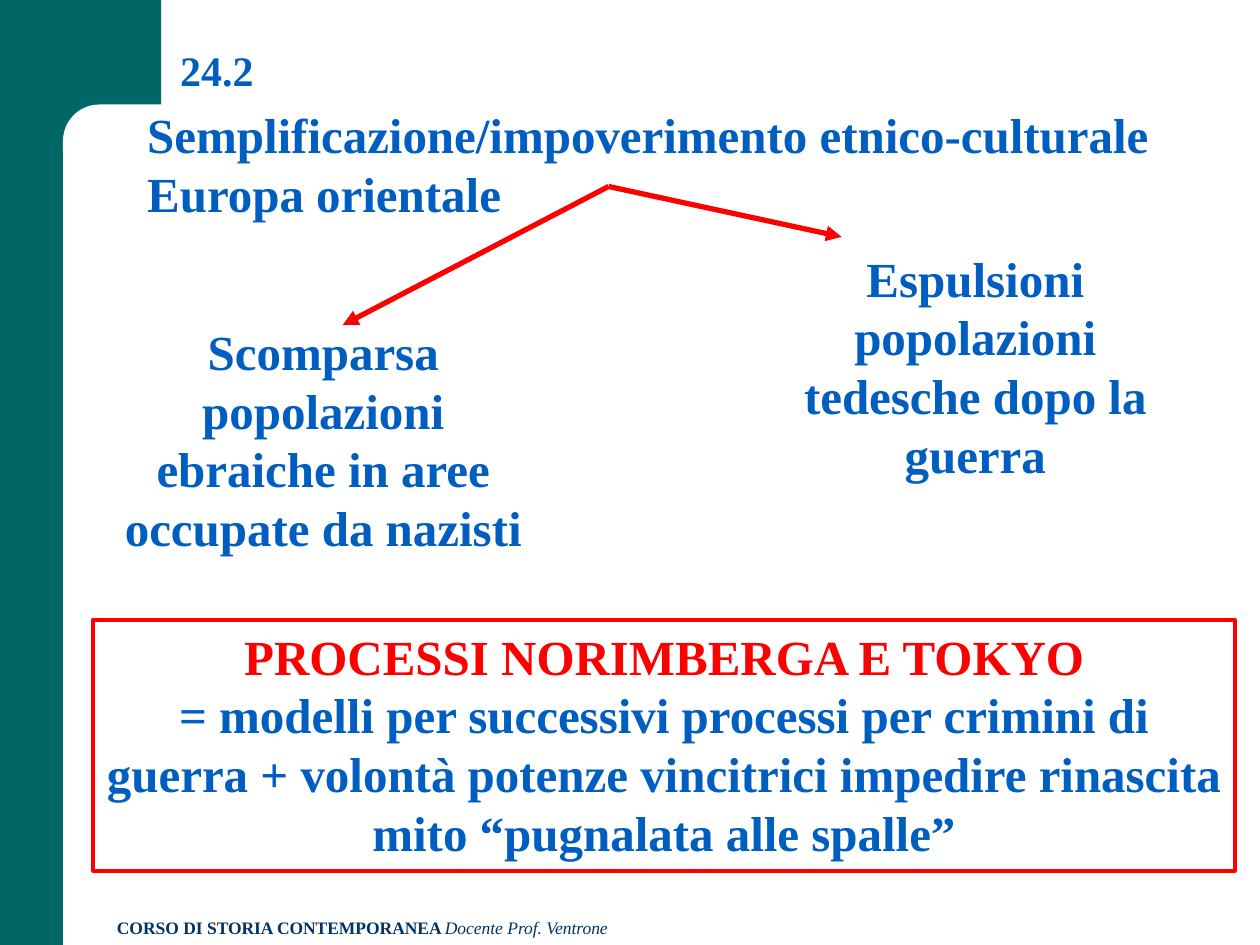
from pptx import Presentation
from pptx.dml.color import RGBColor
from pptx.enum.shapes import MSO_CONNECTOR, MSO_SHAPE
from pptx.enum.text import MSO_ANCHOR, PP_ALIGN
from pptx.oxml.ns import qn
from pptx.util import Inches, Pt
from lxml import etree

RECT, ROUND = MSO_SHAPE.RECTANGLE, MSO_SHAPE.ROUNDED_RECTANGLE
LEFT, MID = PP_ALIGN.LEFT, PP_ALIGN.CENTER
TOP, BOTTOM = MSO_ANCHOR.TOP, MSO_ANCHOR.BOTTOM
LINE = MSO_CONNECTOR.STRAIGHT
FONT = "Times New Roman"
COLORS = {"teal": "006666", "white": "FFFFFF", "navy": "003366",
          "blue": "005EC0", "red": "FF0000"}

NUMBER = "24.2"
FRAME = [
    (RECT, (0, 0, 0.5, 7.5), "teal"),
    (RECT, (0, 0, 1.28, 1.17), "teal"),
    (ROUND, (0.5, 0.83, 5.92, 0.67), "white"),
]
TOPICS = [
    ("Semplificazione/impoverimento etnico-culturale Europa orientale",
     (1.07, 0.78, 8.24, 1.04), LEFT),
    ("Scomparsa popolazioni ebraiche in aree occupate da nazisti",
     (0.77, 2.5, 3.59, 1.99), MID),
    ("Espulsioni popolazioni tedesche dopo la guerra",
     (6.18, 1.92, 3.12, 1.99), MID),
]
TRIALS = [
    ("PROCESSI NORIMBERGA E TOKYO", "red"),
    ("= modelli per successivi processi per crimini di guerra + volontà "
     "potenze vincitrici impedire rinascita mito “pugnalata alle spalle”", "blue"),
]
COURSE, TEACHER = "CORSO DI STORIA CONTEMPORANEA ", "Docente Prof. Ventrone"
FORK, TIPS = (4.83, 1.48), [(2.72, 2.58), (6.68, 1.88)]


def color(name):
    return RGBColor.from_string(COLORS[name])


def inches(box):
    return [Inches(v) for v in box]


def style(run, size, tone, bold=True, italic=False):
    font = run.font
    font.name, font.size = FONT, Pt(size)
    font.bold, font.italic = bold, italic
    font.color.rgb = color(tone)


def write(shape, paras, size, align=LEFT, anchor=TOP):
    frame = shape.text_frame
    frame.word_wrap = True
    frame.vertical_anchor = anchor
    frame.text = "\n".join(text for text, tone in paras)
    for para, (text, tone) in zip(frame.paragraphs, paras):
        para.alignment = align
        style(para.runs[0], size, tone)


def add_block(slide, kind, box, fill=None):
    block = slide.shapes.add_shape(kind, *inches(box))
    block.shadow.inherit = False
    if fill:
        block.fill.solid()
        block.fill.fore_color.rgb = color(fill)
        block.line.fill.background()
    else:
        block.fill.background()
    return block


def add_arrow(slide, start, end):
    arrow = slide.shapes.add_connector(LINE, *inches(start + end))
    arrow.line.color.rgb = color("red")
    arrow.line.width = Pt(3)
    props = arrow.element.spPr
    etree.SubElement(props.find(qn("a:ln")), qn("a:tailEnd"), type="triangle")
    etree.SubElement(props, qn("a:effectLst"))


def main():
    """Build the slide on the simplification of Eastern Europe."""
    deck = Presentation()
    deck.slide_width, deck.slide_height = Inches(10), Inches(7.5)
    slide = deck.slides.add_slide(deck.slide_layouts[5])

    for kind, box, fill in FRAME:
        block = add_block(slide, kind, box, fill)
        if kind == ROUND:
            block.adjustments[0] = 0.43

    foot = slide.shapes.add_textbox(*inches((0.83, 7.23, 6.17, 0.27)))
    write(foot, [(COURSE, "navy")], 10)
    run = foot.text_frame.paragraphs[0].add_run()
    run.text = TEACHER
    style(run, 10, "navy", False, True)

    for text, box, align in TOPICS:
        topic = slide.shapes.add_textbox(*inches(box))
        write(topic, [(text, "blue")], 28, align)
    for tip in TIPS:
        add_arrow(slide, FORK, tip)

    panel = add_block(slide, RECT, (0.74, 4.92, 9.06, 1.99))
    panel.line.color.rgb = color("red")
    panel.line.width = Pt(2.25)
    write(panel, TRIALS, 28, MID)

    title = slide.shapes.title
    title.left, title.top, title.width, title.height = inches((1.33, 0.31, 0.96, 0.5))
    write(title, [(NUMBER, "blue")], 24, LEFT, BOTTOM)
    title.text_frame.paragraphs[0].line_spacing = 0.9
    slide.shapes._spTree.append(title.element)

    deck.save("out.pptx")


if __name__ == "__main__":
    main()
